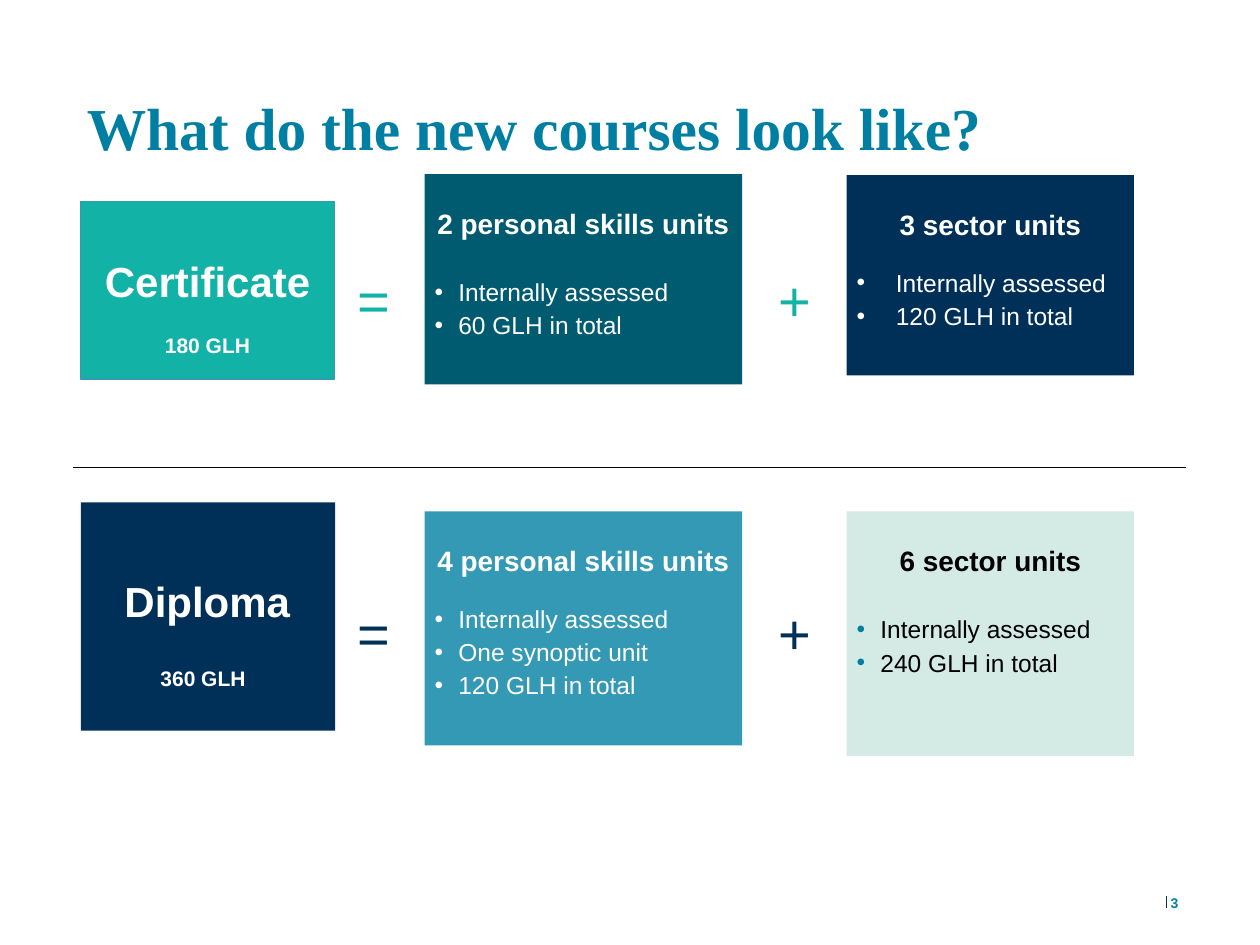
from lxml.etree import SubElement
from pptx import Presentation
from pptx.dml.color import RGBColor
from pptx.enum.shapes import MSO_CONNECTOR, MSO_SHAPE
from pptx.enum.text import MSO_ANCHOR, PP_ALIGN
from pptx.oxml.ns import qn
from pptx.util import Cm, Pt

NAVY = RGBColor(0x00, 0x30, 0x57)
TEAL = RGBColor(0x00, 0x5A, 0x70)
BLUE = RGBColor(0x00, 0x7F, 0xA3)
SKY = RGBColor(0x33, 0x99, 0xB5)
GREEN = RGBColor(0x12, 0xB2, 0xA6)
MINT = RGBColor(0xD4, 0xEA, 0xE4)
WHITE = RGBColor(0xFF, 0xFF, 0xFF)
BLACK = RGBColor(0x00, 0x00, 0x00)

# Columns shared by both rows: left and width in cm
UNITS_X, UNITS_W = 8.56, 6.4
SECTOR_X, SECTOR_W = 17.07, 5.79
EQUALS_X, PLUS_X = 7.21, 15.7


def set_frame(tf, insets, anchor=MSO_ANCHOR.TOP):
    tf.word_wrap = True
    tf.vertical_anchor = anchor
    tf.margin_left, tf.margin_top, tf.margin_right, tf.margin_bottom = map(Cm, insets)


def add_run(p, text, size, color, bold=False, font="Arial"):
    r = p.add_run()
    r.text = text
    r.font.name, r.font.size, r.font.bold = font, Pt(size), bold
    r.font.color.rgb = color


def add_bullet(p, color, indent):
    pPr = p._p.get_or_add_pPr()
    pPr.set("marL", str(Cm(indent)))
    pPr.set("indent", str(-Cm(indent)))
    clr = SubElement(pPr, qn("a:buClr"))
    SubElement(clr, qn("a:srgbClr")).set("val", str(color))
    SubElement(pPr, qn("a:buFont")).set("typeface", "Arial")
    SubElement(pPr, qn("a:buChar")).set("char", "•")


def add_box(s, box, fill):
    sp = s.shapes.add_shape(MSO_SHAPE.RECTANGLE, *map(Cm, box))
    sp.shadow.inherit = False
    sp.fill.solid()
    sp.fill.fore_color.rgb = fill
    sp.line.fill.background()
    return sp


def add_label(s, box, text, size, color, bold=False, top=0.1,
              align=PP_ALIGN.LEFT, anchor=MSO_ANCHOR.TOP):
    tf = s.shapes.add_textbox(*map(Cm, box)).text_frame
    set_frame(tf, (0, top, 0, 0), anchor)
    p = tf.paragraphs[0]
    p.alignment = align
    add_run(p, text, size, color, bold)


def add_line(s, x1, y1, x2, y2, color, width):
    line = s.shapes.add_connector(MSO_CONNECTOR.STRAIGHT, *map(Cm, (x1, y1, x2, y2)))
    line.line.color.rgb = color
    line.line.width = Pt(width)
    SubElement(line._element.spPr, qn("a:effectLst"))


def add_title(s, box, text):
    title = s.shapes.title
    title.left, title.top, title.width, title.height = map(Cm, box)
    set_frame(title.text_frame, (0.25, 0.4, 0.25, 0.25))
    p = title.text_frame.paragraphs[0]
    p.alignment = PP_ALIGN.LEFT
    p.line_spacing = 1.18
    add_run(p, text, 34, BLUE, True, "Times New Roman")


def add_units(s, box, fill, heading, items, gap,
              color=WHITE, bullet=WHITE, indent=0.48):
    """Box with a centred heading and, after the gap in points, a list."""
    tf = add_box(s, box, fill).text_frame
    set_frame(tf, (0.2, 0.87, 0.2, 0.2))
    p = tf.paragraphs[0]
    p.alignment = PP_ALIGN.CENTER
    p.line_spacing, p.space_after = Pt(13), Pt(gap)
    add_run(p, heading, 16, color, True)
    for item in items:
        p = tf.add_paragraph()
        p.alignment = PP_ALIGN.LEFT
        p.line_spacing, p.space_after = Pt(13), Pt(6)
        add_bullet(p, bullet, indent)
        add_run(p, item, 14, color)


def add_operators(s, top, color):
    for x, sign in ((EQUALS_X, "="), (PLUS_X, "+")):
        add_label(s, (x, top, 0.86, 1.37), sign, 32, color)


def add_certificate(s, box):
    sp = add_box(s, box, GREEN)
    sp.line.color.rgb = SKY
    sp.line.width = Pt(0.75)
    tf = sp.text_frame
    set_frame(tf, (0, 1.1, 0, 0))
    p = tf.paragraphs[0]
    p.alignment = PP_ALIGN.CENTER
    add_run(p, "Certificate", 24, WHITE, True)
    p = tf.add_paragraph()
    p.alignment = PP_ALIGN.CENTER
    p.space_before = Pt(15)
    add_run(p, "180 GLH", 12, WHITE, True)


def add_diploma(s, box):
    left, top, width, height = box
    tf = add_box(s, box, NAVY).text_frame
    set_frame(tf, (0.3, 0, 0.5, 0.8), MSO_ANCHOR.BOTTOM)
    p = tf.paragraphs[0]
    p.alignment = PP_ALIGN.CENTER
    add_run(p, "360 GLH", 12, WHITE, True)
    add_label(s, (left + 0.86, top + 1.38, 3.38, 1.02), "Diploma", 24, WHITE, True,
              align=PP_ALIGN.CENTER)


def main():
    prs = Presentation()
    prs.slide_width, prs.slide_height = Cm(25.4), Cm(19.05)
    s = prs.slides.add_slide(prs.slide_layouts[5])
    add_title(s, (1.5, 1.17, 21.36, 3.1), "What do the new courses look like?")

    # Certificate row
    add_certificate(s, (1.63, 4.06, 5.11, 3.58))
    add_operators(s, 5.25, GREEN)
    add_units(s, (UNITS_X, 3.51, UNITS_W, 4.24), TEAL, "2 personal skills units",
              ["Internally assessed", "60 GLH in total"], 25)
    add_units(s, (SECTOR_X, 3.53, SECTOR_W, 4.04), NAVY, "3 sector units",
              ["Internally assessed", "120 GLH in total"], 19, indent=0.79)

    # Divider
    add_line(s, 1.47, 9.42, 23.9, 9.42, BLACK, 0.25)

    # Diploma row
    add_diploma(s, (1.63, 10.13, 5.13, 4.6))
    add_operators(s, 11.96, NAVY)
    add_units(s, (UNITS_X, 10.31, UNITS_W, 4.72), SKY, "4 personal skills units",
              ["Internally assessed", "One synoptic unit", "120 GLH in total"], 19)
    add_units(s, (SECTOR_X, 10.31, SECTOR_W, 4.93), MINT, "6 sector units",
              ["Internally assessed", "240 GLH in total"], 25, BLACK, BLUE)

    # Page number
    add_line(s, 23.52, 18.06, 23.52, 18.31, NAVY, 0.75)
    add_label(s, (23.6, 18.03, 1.19, 0.36), "3", 8, BLUE, True, top=0,
              anchor=MSO_ANCHOR.MIDDLE)

    prs.save("out.pptx")


if __name__ == "__main__":
    main()
